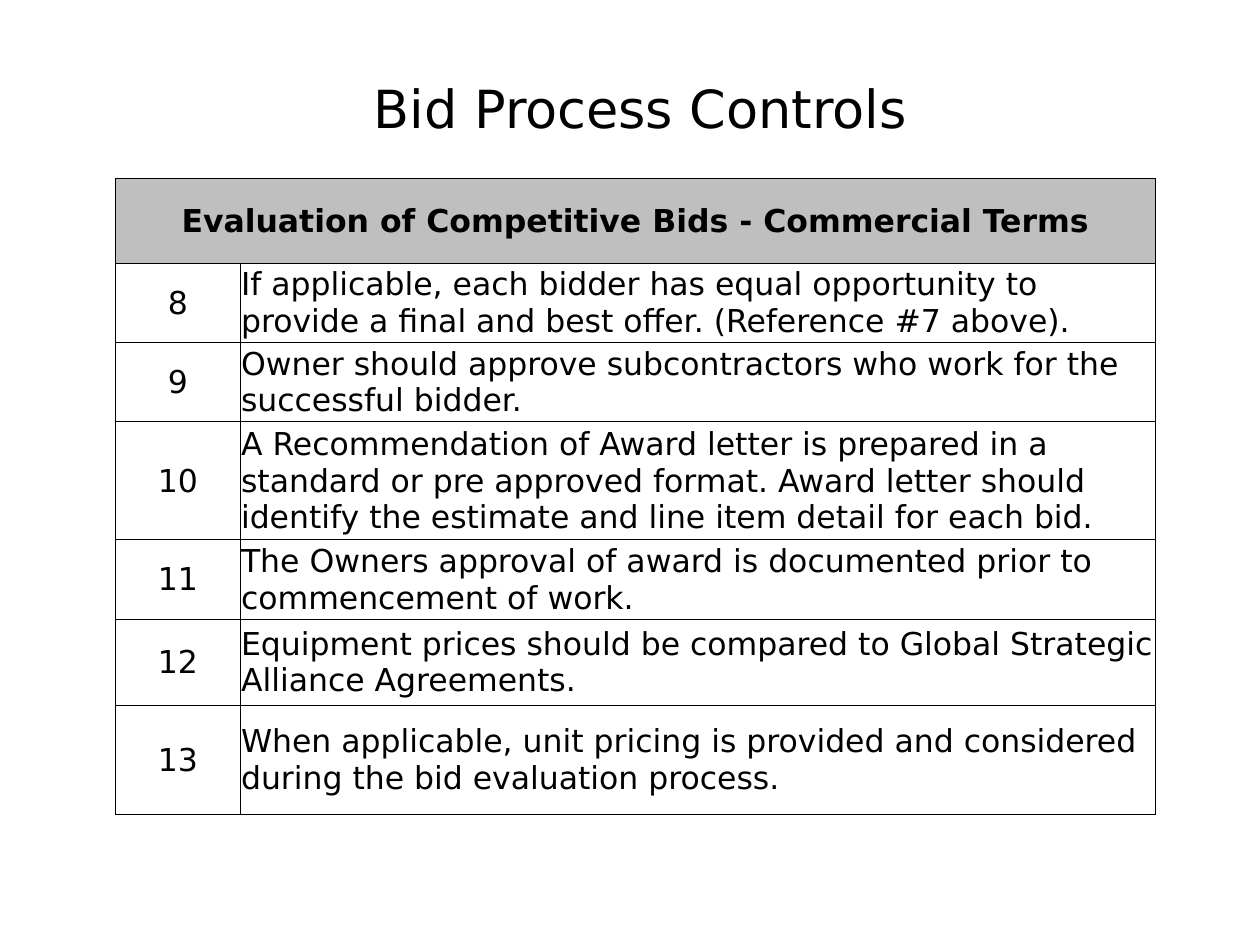
from lxml.etree import SubElement
from pptx import Presentation
from pptx.dml.color import RGBColor
from pptx.enum.text import MSO_ANCHOR as Anchor, MSO_AUTO_SIZE as AutoSize, PP_ALIGN as Align
from pptx.oxml.ns import qn
from pptx.util import Cm, Pt

BLACK = RGBColor(0x00, 0x00, 0x00)
GRAY = RGBColor(0xBF, 0xBF, 0xBF)
FONT = "DejaVu Sans"

TITLE = "Bid Process Controls"
HEADING = "Evaluation of Competitive Bids - Commercial Terms"
FIRST_NUMBER = 8
CONTROLS = [
    "If applicable, each bidder has equal opportunity to provide a final and best offer. "
    "(Reference #7 above).",
    "Owner should approve subcontractors who work for the successful bidder.",
    "A Recommendation of Award letter is prepared in a standard or pre approved format. "
    "Award letter should identify the estimate and line item detail for each bid.",
    "The Owners approval of award is documented prior to commencement of work.",
    "Equipment prices should be compared to Global Strategic Alliance Agreements.",
    "When applicable, unit pricing is provided and considered during the bid evaluation process.",
]
COLUMN_WIDTHS = [2.51, 18.45]
ROW_HEIGHTS = [1.7, 1.6, 1.6, 2.38, 1.6, 1.73, 2.21]


def write_text(frame, text, size=18, bold=False, align=Align.LEFT, line_spacing=None):
    paragraph = frame.paragraphs[0]
    paragraph.alignment = align
    paragraph.line_spacing = line_spacing
    run = paragraph.add_run()
    run.text = text
    run.font.name = FONT
    run.font.size = Pt(size)
    run.font.bold = bold
    run.font.color.rgb = BLACK


def add_title(slide):
    title = slide.shapes.title
    title.left, title.top, title.width, title.height = Cm(2.54), Cm(1.07), Cm(20.75), Cm(2.34)
    frame = title.text_frame
    frame.auto_size = AutoSize.NONE
    frame.vertical_anchor = Anchor.MIDDLE
    write_text(frame, TITLE, size=30, align=Align.CENTER, line_spacing=0.9)


def set_borders(cell):
    properties = cell._tc.get_or_add_tcPr()
    for index, side in enumerate(("lnL", "lnR", "lnT", "lnB")):
        line = SubElement(properties, qn(f"a:{side}"), w=str(Pt(0.5)))
        fill = SubElement(line, qn("a:solidFill"))
        SubElement(fill, qn("a:srgbClr"), val=str(BLACK))
        properties.insert(index, line)  # borders come before the fill


def format_cell(cell):
    cell.vertical_anchor = Anchor.MIDDLE
    cell.margin_left = cell.margin_right = cell.margin_top = Cm(0.02)
    cell.margin_bottom = 0
    cell.fill.background()
    set_borders(cell)


def add_controls_table(slide):
    table = slide.shapes.add_table(
        len(ROW_HEIGHTS), len(COLUMN_WIDTHS), Cm(2.33), Cm(3.6),
        Cm(sum(COLUMN_WIDTHS)), Cm(sum(ROW_HEIGHTS)),
    ).table
    table.horz_banding = False
    for column, width in zip(table.columns, COLUMN_WIDTHS):
        column.width = Cm(width)
    for row, height in zip(table.rows, ROW_HEIGHTS):
        row.height = Cm(height)
    for cell in table.iter_cells():
        format_cell(cell)

    heading = table.cell(0, 0)
    heading.merge(table.cell(0, 1))
    heading.fill.solid()
    heading.fill.fore_color.rgb = GRAY
    write_text(heading.text_frame, HEADING, bold=True, align=Align.CENTER)

    for row, control in enumerate(CONTROLS, start=1):
        number = str(FIRST_NUMBER + row - 1)
        write_text(table.cell(row, 0).text_frame, number, align=Align.CENTER)
        write_text(table.cell(row, 1).text_frame, control)


def main():
    presentation = Presentation()
    presentation.slide_width, presentation.slide_height = Cm(25.4), Cm(19.05)
    slide = presentation.slides.add_slide(presentation.slide_layouts.get_by_name("Title Only"))
    add_title(slide)
    add_controls_table(slide)
    presentation.save("out.pptx")


if __name__ == "__main__":
    main()
